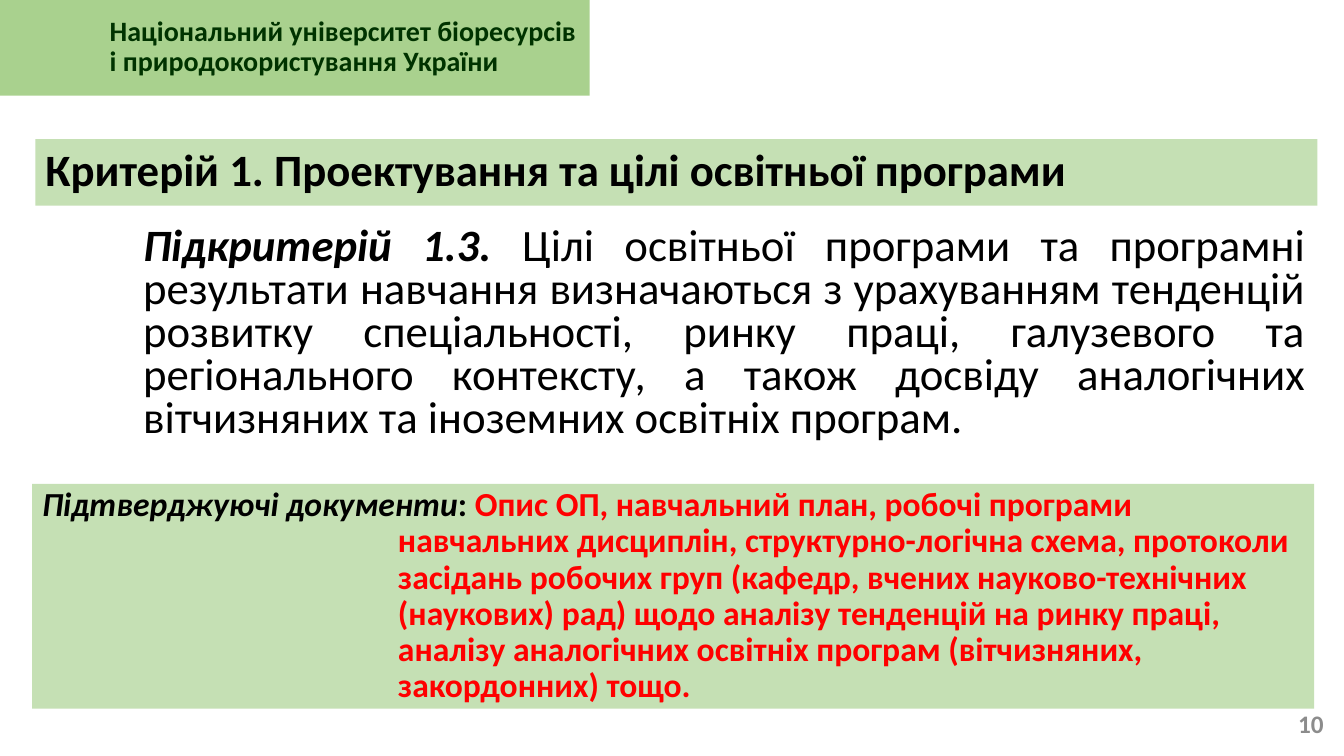
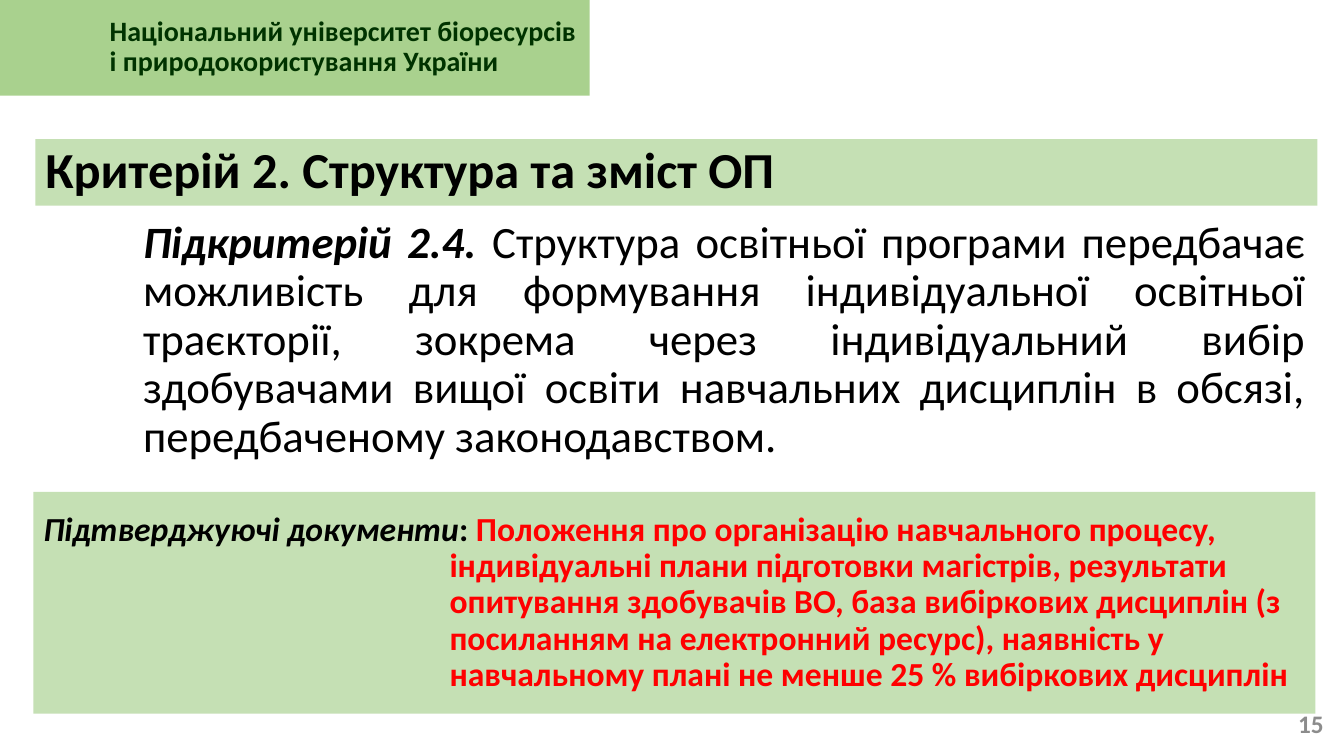
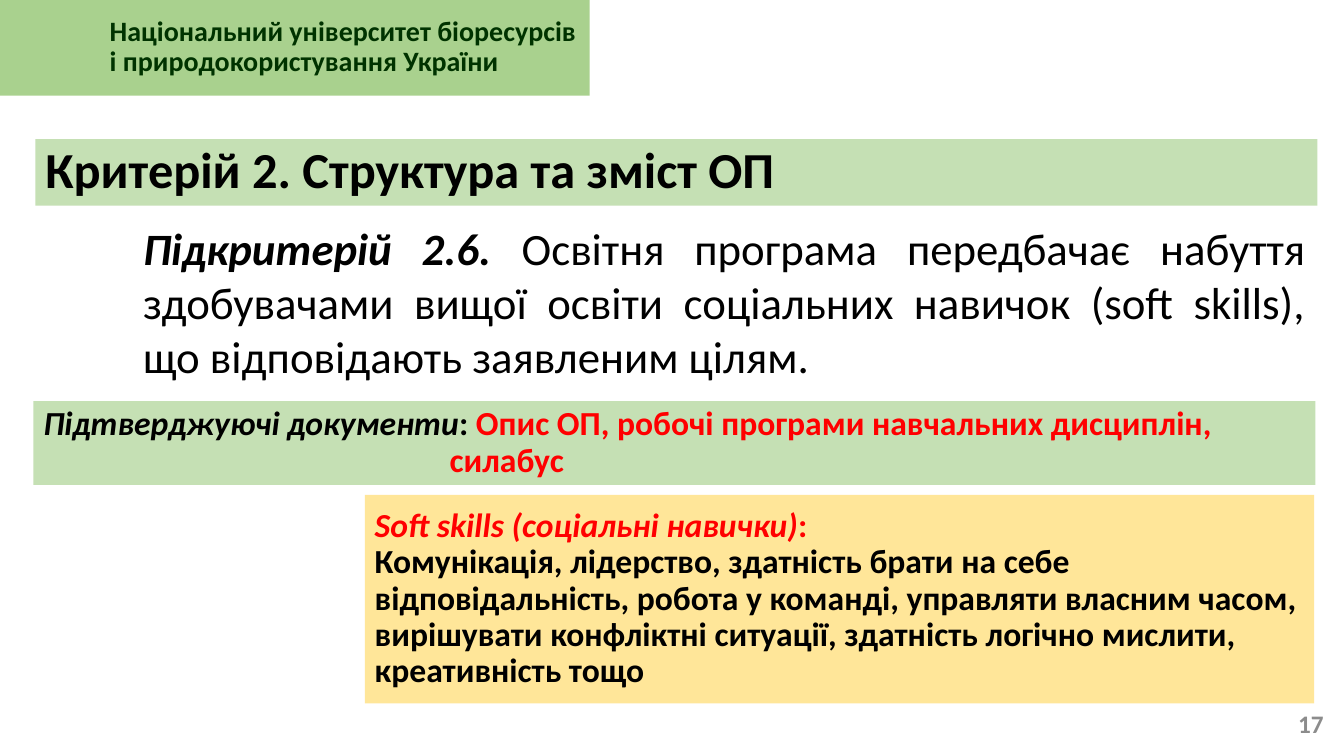
from dataclasses import dataclass
from typing import NamedTuple, Optional

import pptx
import pptx.dml.color
import pptx.enum.shapes
import pptx.enum.text
import pptx.oxml
import pptx.oxml.ns
import pptx.util

Pt = pptx.util.Pt
RGB = pptx.dml.color.RGBColor
Align = pptx.enum.text.PP_ALIGN


# Theme: colours, font and type sizes
@dataclass(frozen=True)
class Theme:
    font: str = "Calibri"
    header_fill: RGB = RGB(0xA9, 0xD1, 0x8E)
    band_fill: RGB = RGB(0xC5, 0xE0, 0xB4)
    note_fill: RGB = RGB(0xFF, 0xE6, 0x99)
    header_text: RGB = RGB(0x00, 0x33, 0x00)
    text: RGB = RGB(0x00, 0x00, 0x00)
    accent: RGB = RGB(0xFF, 0x00, 0x00)
    page_number: RGB = RGB(0x8C, 0x8C, 0x8C)
    body_size: float = 32
    evidence_size: float = 24
    header_size: float = 20
    page_number_size: float = 18


THEME = Theme()


class Box(NamedTuple):
    left: float
    top: float
    width: float
    height: float


class Span(NamedTuple):
    text: str
    color: Optional[RGB] = None
    bold: Optional[bool] = None
    italic: Optional[bool] = None


@dataclass(frozen=True)
class ParagraphStyle:
    size: float
    color: RGB = THEME.text
    bold: bool = True
    align: Align = Align.LEFT
    spacing: float = 0.9
    margin: float = 0
    indent: float = 0


@dataclass(frozen=True)
class Criterion:
    page: int
    title: str
    title_size: float
    label: str
    statement: str
    body_height: float
    body_spacing: float
    evidence: str
    evidence_box: Box
    evidence_indent: float
    soft_skills: str = ""


# Shared places and wording
BAND_WIDTH = 915.8
HEADER_BOX = Box(0, -0.7, 421.2, 69.1)
TITLE_BOX = Box(25.2, 99.4, BAND_WIDTH, 47.5)
BODY_LEFT, BODY_TOP, BODY_WIDTH = 95, 152, 845.3
PAGE_BOX = Box(917.3, 502.6, 35.3, 28.8)
SOFT_SKILLS_BOX = Box(260.6, 353.5, 678.2, 149)
UNIVERSITY = "Національний університет біоресурсів і природокористування України"

CRITERIA = [
    Criterion(
        10, "Критерій 1. Проектування та цілі освітньої програми", 32,
        "Підкритерій 1.3. ",
        "Цілі освітньої програми та програмні результати навчання визначаються "
        "з урахуванням тенденцій розвитку спеціальності, ринку праці, галузевого "
        "та регіонального контексту, а також досвіду аналогічних вітчизняних "
        "та іноземних освітніх програм.",
        174.2, 0.8,
        "Опис ОП, навчальний план, робочі програми навчальних дисциплін, "
        "структурно-логічна схема, протоколи засідань робочих груп (кафедр, "
        "вчених науково-технічних (наукових) рад) щодо аналізу тенденцій на "
        "ринку праці, аналізу аналогічних освітніх програм (вітчизняних, "
        "закордонних) тощо.",
        Box(23, 345.6, BAND_WIDTH, 160.6), 254.2,
    ),
    Criterion(
        15, "Критерій 2. Структура та зміст ОП", 36,
        "Підкритерій 2.4. ",
        "Структура освітньої програми передбачає можливість для формування "
        "індивідуальної освітньої траєкторії, зокрема через індивідуальний вибір "
        "здобувачами вищої освіти навчальних дисциплін в обсязі, передбаченому "
        "законодавством.",
        182.9, 0.9,
        "Положення про організацію навчального процесу, індивідуальні плани "
        "підготовки магістрів, результати опитування здобувачів ВО, база "
        "вибіркових дисциплін (з посиланням на електронний ресурс), наявність у "
        "навчальному плані не менше 25 % вибіркових дисциплін",
        Box(23.8, 351.4, BAND_WIDTH, 158.4), 290.2,
    ),
    Criterion(
        17, "Критерій 2. Структура та зміст ОП", 36,
        "Підкритерій 2.6. ",
        "Освітня програма передбачає набуття здобувачами вищої освіти соціальних "
        "навичок (soft skills), що відповідають заявленим цілям.",
        126.7, 1.0,
        "Опис ОП, робочі програми навчальних дисциплін, силабус",
        Box(23.8, 286.6, BAND_WIDTH, 59.8), 290.2,
        "Комунікація, лідерство, здатність брати на себе відповідальність, робота "
        "у команді, управляти власним часом, вирішувати конфліктні ситуації, "
        "здатність логічно мислити, креативність тощо",
    ),
]


# Drawing helpers
def write_text(shape, style: ParagraphStyle, *paragraphs: list[Span]) -> None:
    frame = shape.text_frame
    frame.word_wrap = True
    frame.auto_size = pptx.enum.text.MSO_AUTO_SIZE.NONE
    frame.vertical_anchor = pptx.enum.text.MSO_ANCHOR.MIDDLE
    for index, spans in enumerate(paragraphs):
        paragraph = frame.add_paragraph() if index else frame.paragraphs[0]
        properties = paragraph._p.get_or_add_pPr()
        properties.set("marL", str(Pt(style.margin)))
        properties.set("indent", str(Pt(style.indent)))
        pptx.oxml.ns.qn("a:buNone")
        properties.append(pptx.oxml.parse_xml(
            f'<a:buNone {pptx.oxml.ns.nsdecls("a")}/>'))
        paragraph.alignment = style.align
        paragraph.line_spacing = style.spacing
        paragraph.space_before = Pt(0)
        paragraph.font.name = THEME.font
        paragraph.font.size = Pt(style.size)
        paragraph.font.bold = style.bold
        paragraph.font.color.rgb = style.color
        for span in spans:
            run = paragraph.add_run()
            run.text = span.text
            if span.bold is not None:
                run.font.bold = span.bold
            if span.italic is not None:
                run.font.italic = span.italic
            if span.color is not None:
                run.font.color.rgb = span.color


def place(shape, box: Box) -> None:
    shape.left, shape.top, shape.width, shape.height = map(Pt, box)


def fill_solid(shape, color: RGB) -> None:
    shape.fill.solid()
    shape.fill.fore_color.rgb = color


def add_band(slide, box: Box, color: RGB, style: ParagraphStyle,
             *paragraphs: list[Span]) -> None:
    band = slide.shapes.add_shape(
        pptx.enum.shapes.MSO_SHAPE.RECTANGLE, *map(Pt, box))
    band.shadow.inherit = False
    band.line.fill.background()
    fill_solid(band, color)
    write_text(band, style, *paragraphs)


def add_frame(slide, page: int) -> None:
    """Header band and page number found on every slide."""
    add_band(slide, HEADER_BOX, THEME.header_fill,
             ParagraphStyle(THEME.header_size, THEME.header_text, margin=71.3),
             [Span(UNIVERSITY)])
    number = slide.shapes.add_textbox(*map(Pt, PAGE_BOX))
    write_text(number,
               ParagraphStyle(THEME.page_number_size, THEME.page_number,
                              align=Align.RIGHT, spacing=1.0),
               [Span(str(page))])


def add_criterion(presentation, criterion: Criterion) -> None:
    slide = presentation.slides.add_slide(presentation.slide_layouts[1])
    add_frame(slide, criterion.page)

    # Title and sub-criterion
    title, body = slide.placeholders
    place(title, TITLE_BOX)
    fill_solid(title, THEME.band_fill)
    write_text(title, ParagraphStyle(criterion.title_size), [Span(criterion.title)])
    place(body, Box(BODY_LEFT, BODY_TOP, BODY_WIDTH, criterion.body_height))
    write_text(body,
               ParagraphStyle(THEME.body_size, bold=False, align=Align.JUSTIFY,
                              spacing=criterion.body_spacing),
               [Span(criterion.label, bold=True, italic=True),
                Span(criterion.statement)])

    # Supporting documents
    add_band(slide, criterion.evidence_box, THEME.band_fill,
             ParagraphStyle(THEME.evidence_size, margin=criterion.evidence_indent,
                            indent=-criterion.evidence_indent),
             [Span("Підтверджуючі документи", THEME.text, italic=True),
              Span(": ", THEME.text),
              Span(criterion.evidence, THEME.accent)])

    # Soft skills note
    if criterion.soft_skills:
        add_band(slide, SOFT_SKILLS_BOX, THEME.note_fill,
                 ParagraphStyle(THEME.evidence_size),
                 [Span("Soft skills (соціальні навички)", THEME.accent, italic=True),
                  Span(":", THEME.accent)],
                 [Span(criterion.soft_skills)])


def main() -> None:
    presentation = pptx.Presentation()
    presentation.slide_width, presentation.slide_height = Pt(960), Pt(540)
    for criterion in CRITERIA:
        add_criterion(presentation, criterion)
    presentation.save("out.pptx")


if __name__ == "__main__":
    main()
